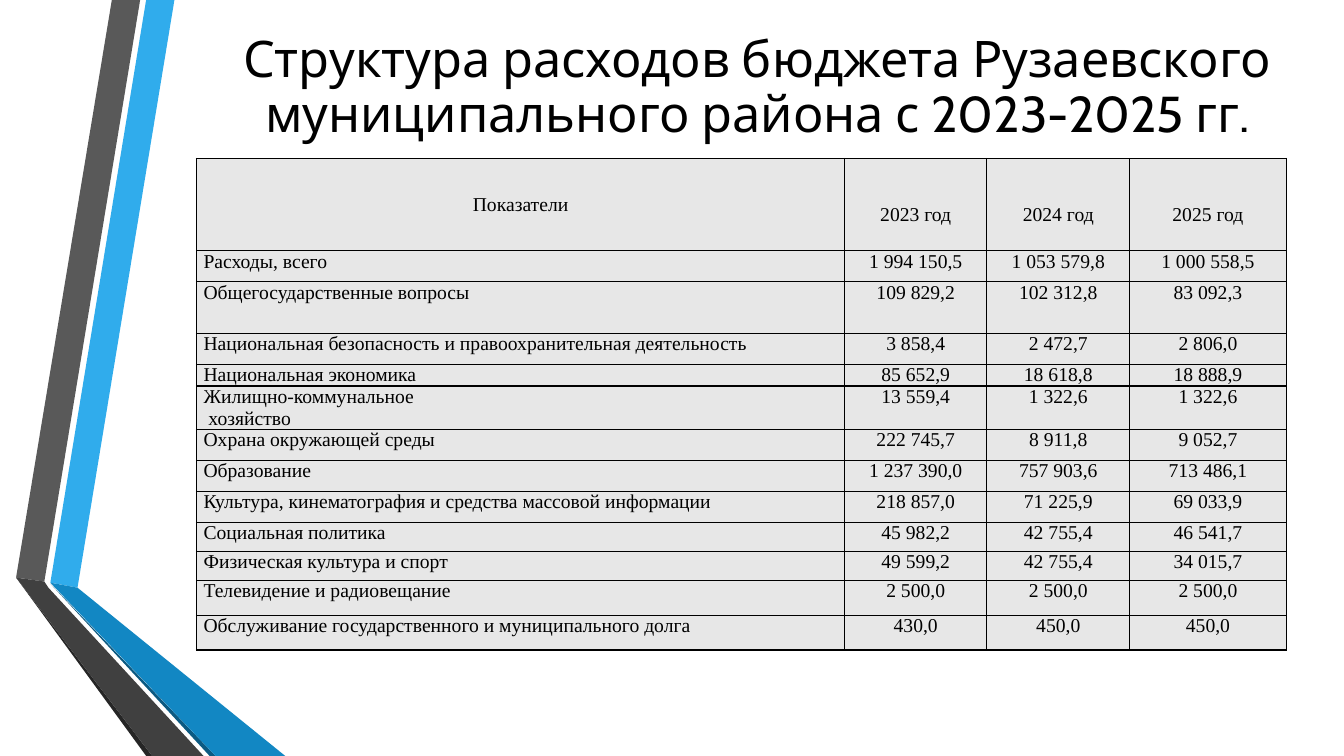
from dataclasses import dataclass

from lxml import etree
from pptx import Presentation
from pptx.dml.color import RGBColor
from pptx.enum.text import MSO_ANCHOR, MSO_AUTO_SIZE, PP_ALIGN
from pptx.oxml.ns import qn
from pptx.util import Pt

LEFT, CENTER = PP_ALIGN.LEFT, PP_ALIGN.CENTER
TOP, MIDDLE = MSO_ANCHOR.TOP, MSO_ANCHOR.MIDDLE
NO_AUTOFIT = MSO_AUTO_SIZE.NONE
TITLE_ONLY = 5


@dataclass(frozen=True)
class Theme:
    text: str = "000000"
    border: str = "000000"
    cell: str = "E7E7E7"
    sky: str = "30ACEC"
    blue: str = "1287C3"
    navy: str = "0C5A82"
    gray: str = "595959"
    charcoal: str = "404040"
    coal: str = "262626"
    title_font: str = "Cabin"
    table_font: str = "Times New Roman"
    title_size: float = 36
    table_size: float = 14
    border_width: float = 1


@dataclass(frozen=True)
class Ribbon:
    color: str
    points: tuple[tuple[float, float], ...]


@dataclass(frozen=True)
class Row:
    label: str
    values: tuple[float, ...]
    height: float = 22.2


THEME = Theme()
TITLE = "Структура расходов бюджета Рузаевского муниципального района с 2023-2025 гг."
YEARS = (2023, 2024, 2025)
HEADER_HEIGHT = 65.8
HEADER_DROP = 15.5
COLUMN_WIDTHS = (463, 101.5, 102.2, 111.6)
TABLE_LEFT, TABLE_TOP = 140.4, 113.2

RIBBONS = (
    Ribbon(THEME.sky, ((36, 416.2), (55.4, 419.8), (124.6, 0), (104.4, 0))),
    Ribbon(THEME.gray, ((100.1, 0), (79.9, 0), (11.5, 412.6), (31.7, 415.4))),
    Ribbon(THEME.coal, ((11.5, 412.6), (104.4, 540), (108.7, 540))),
    Ribbon(THEME.navy, ((36, 416.9), (149.8, 540), (154.1, 540))),
    Ribbon(THEME.blue, ((36, 416.2), (154.1, 540), (203.8, 540), (55.4, 419.8))),
    Ribbon(THEME.charcoal, ((145.4, 540), (34.6, 419.8), (31.7, 415.4),
                            (11.5, 412.6), (108.7, 540))),
)

ROWS = (
    Row("Расходы, всего", (1994150.5, 1053579.8, 1000558.5)),
    Row("Общегосударственные вопросы", (109829.2, 102312.8, 83092.3), 36.8),
    Row("Национальная безопасность и правоохранительная деятельность",
        (3858.4, 2472.7, 2806.0)),
    Row("Национальная экономика", (85652.9, 18618.8, 18888.9), 15.5),
    Row("Жилищно-коммунальное\n хозяйство", (13559.4, 1322.6, 1322.6), 31),
    Row("Охрана окружающей среды", (222745.7, 8911.8, 9052.7)),
    Row("Образование", (1237390.0, 757903.6, 713486.1)),
    Row("Культура, кинематография и средства массовой информации",
        (218857.0, 71225.9, 69033.9)),
    Row("Социальная политика", (45982.2, 42755.4, 46541.7), 20.6),
    Row("Физическая культура и спорт", (49599.2, 42755.4, 34015.7), 20.6),
    Row("Телевидение и радиовещание", (2500.0, 2500.0, 2500.0), 25.2),
    Row("Обслуживание государственного и муниципального долга",
        (430.0, 450.0, 450.0), 24.7),
)


def apply(target, values: dict) -> None:
    for name, value in values.items():
        setattr(target, name, value)


def format_number(value: float) -> str:
    return f"{value:,.1f}".replace(",", " ").replace(".", ",")


def write_text(frame, text: str, align, font_name: str, size: float,
               spacing: float = 1.0) -> None:
    frame.text = text
    for para in frame.paragraphs:
        apply(para, {"alignment": align, "line_spacing": spacing})
        for span in para.runs:
            apply(span.font, {"name": font_name, "size": Pt(size), "bold": False})
            span.font.color.rgb = RGBColor.from_string(THEME.text)


def draw_ribbon(shapes, ribbon: Ribbon) -> None:
    start, *rest = [(Pt(x), Pt(y)) for x, y in ribbon.points]
    builder = shapes.build_freeform(*start)
    builder.add_line_segments(rest, close=True)
    shape = builder.convert_to_shape()
    shape.shadow.inherit = False
    shape.fill.solid()
    shape.fill.fore_color.rgb = RGBColor.from_string(ribbon.color)
    shape.line.fill.background()


def draw_title(slide) -> None:
    title = slide.shapes.title
    apply(title, {"left": Pt(131), "top": Pt(13.7), "width": Pt(820), "height": Pt(99.4)})
    apply(title.text_frame, {"word_wrap": True, "auto_size": NO_AUTOFIT,
                             "vertical_anchor": MIDDLE})
    write_text(title.text_frame, TITLE, CENTER, THEME.title_font, THEME.title_size, 0.9)


def add_borders(cell) -> None:
    properties = cell._tc.get_or_add_tcPr()
    for index, side in enumerate(("a:lnL", "a:lnR", "a:lnT", "a:lnB")):
        line = etree.Element(qn(side), w=str(Pt(THEME.border_width)))
        fill = etree.SubElement(line, qn("a:solidFill"))
        etree.SubElement(fill, qn("a:srgbClr"), val=THEME.border)
        properties.insert(index, line)


def fill_cell(cell, text: str, align, anchor, drop: float = 0) -> None:
    apply(cell, {"margin_left": Pt(5), "margin_right": Pt(5), "margin_top": Pt(drop),
                 "margin_bottom": Pt(0), "vertical_anchor": anchor})
    cell.fill.solid()
    cell.fill.fore_color.rgb = RGBColor.from_string(THEME.cell)
    write_text(cell.text_frame, text, align, THEME.table_font, THEME.table_size)
    add_borders(cell)


def draw_table(slide) -> None:
    heights = (HEADER_HEIGHT, *(row.height for row in ROWS))
    table = slide.shapes.add_table(
        len(heights), len(COLUMN_WIDTHS), Pt(TABLE_LEFT), Pt(TABLE_TOP),
        Pt(sum(COLUMN_WIDTHS)), Pt(sum(heights))).table
    apply(table, {"first_row": False, "horz_banding": False})
    for column, width in zip(table.columns, COLUMN_WIDTHS):
        column.width = Pt(width)
    for table_row, height in zip(table.rows, heights):
        table_row.height = Pt(height)

    # Header
    fill_cell(table.cell(0, 0), "Показатели", CENTER, MIDDLE)
    for column, year in enumerate(YEARS, 1):
        fill_cell(table.cell(0, column), f"{year} год", CENTER, MIDDLE, HEADER_DROP)

    # Expenditure rows
    for index, row in enumerate(ROWS, 1):
        fill_cell(table.cell(index, 0), row.label, LEFT, TOP)
        for column, value in enumerate(row.values, 1):
            fill_cell(table.cell(index, column), format_number(value), CENTER, TOP)


def main() -> None:
    deck = Presentation()
    apply(deck, {"slide_width": Pt(960), "slide_height": Pt(540)})
    page = deck.slides.add_slide(deck.slide_layouts[TITLE_ONLY])

    # Ribbons along the left edge
    group = page.shapes.add_group_shape()
    for ribbon in RIBBONS:
        draw_ribbon(group.shapes, ribbon)

    # Title and table
    draw_title(page)
    draw_table(page)
    deck.save("out.pptx")


if __name__ == "__main__":
    main()
